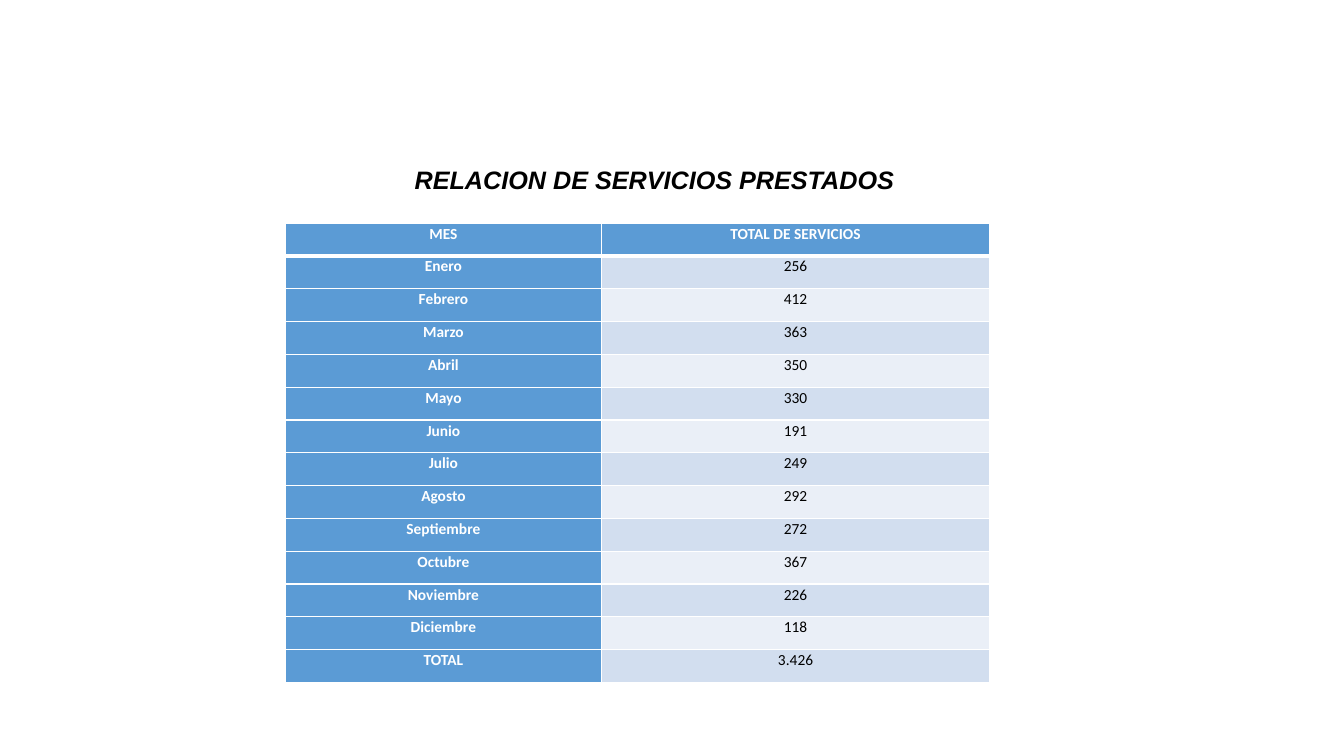
from lxml import etree
from pptx import Presentation
from pptx.dml.color import RGBColor
from pptx.enum.text import MSO_AUTO_SIZE, PP_ALIGN
from pptx.oxml.ns import qn
from pptx.util import Cm, Pt

CENTER = PP_ALIGN.CENTER
GROW = MSO_AUTO_SIZE.SHAPE_TO_FIT_TEXT
WHITE = RGBColor(0xFF, 0xFF, 0xFF)
BLACK = RGBColor(0x00, 0x00, 0x00)
BLUE = RGBColor(0x5B, 0x9B, 0xD5)
BANDS = [RGBColor(0xEA, 0xEF, 0xF7), RGBColor(0xD2, 0xDE, 0xEF)]

ROWS = [
    ("MES", "TOTAL DE SERVICIOS"),
    ("Enero", "256"),
    ("Febrero", "412"),
    ("Marzo", "363"),
    ("Abril", "350"),
    ("Mayo", "330"),
    ("Junio", "191"),
    ("Julio", "249"),
    ("Agosto", "292"),
    ("Septiembre", "272"),
    ("Octubre", "367"),
    ("Noviembre", "226"),
    ("Diciembre", "118"),
    ("TOTAL", "3.426"),
]


def add_border(cell, side, width):
    ln = etree.SubElement(cell._tc.get_or_add_tcPr(), qn("a:" + side), w=str(Pt(width)))
    fill = etree.SubElement(ln, qn("a:solidFill"))
    etree.SubElement(fill, qn("a:srgbClr"), val=str(WHITE))


def format_text(p, font, size, color, bold):
    p.alignment = CENTER
    p.line_spacing = 1.07
    r = p.runs[0]
    r.font.name = font
    r.font.size = Pt(size)
    r.font.bold = bold
    r.font.color.rgb = color


prs = Presentation()
prs.slide_width = Cm(33.87)
prs.slide_height = Cm(19.05)
s = prs.slides.add_slide(prs.slide_layouts[6])

table = s.shapes.add_table(len(ROWS), 2, Cm(7.2), Cm(5.62), Cm(17.75), Cm(11.58)).table
table.columns[0].width = Cm(7.95)
table.columns[1].width = Cm(9.8)

for i, row in enumerate(ROWS):
    for j, text in enumerate(row):
        cell = table.cell(i, j)
        strong = i == 0 or j == 0
        cell.margin_left = cell.margin_right = Cm(0.18)
        cell.margin_top = cell.margin_bottom = 0
        add_border(cell, "lnL", 1)
        add_border(cell, "lnR", 1)
        add_border(cell, "lnT", 3 if i == 1 else 1)
        add_border(cell, "lnB", 3 if i == 0 else 1)
        cell.fill.solid()
        cell.fill.fore_color.rgb = BLUE if strong else BANDS[i % 2]
        cell.text_frame.text = text
        format_text(cell.text_frame.paragraphs[0], "Calibri", 11,
                    WHITE if strong else BLACK, strong)

title = s.shapes.add_textbox(Cm(10.13), Cm(3.96), Cm(12.73), Cm(1.09))
tf = title.text_frame
tf.word_wrap = False
tf.auto_size = GROW
tf.text = "RELACION DE SERVICIOS PRESTADOS"
p = tf.paragraphs[0]
format_text(p, "Arial", 18, BLACK, True)
p.runs[0].font.italic = True

prs.save("out.pptx")
